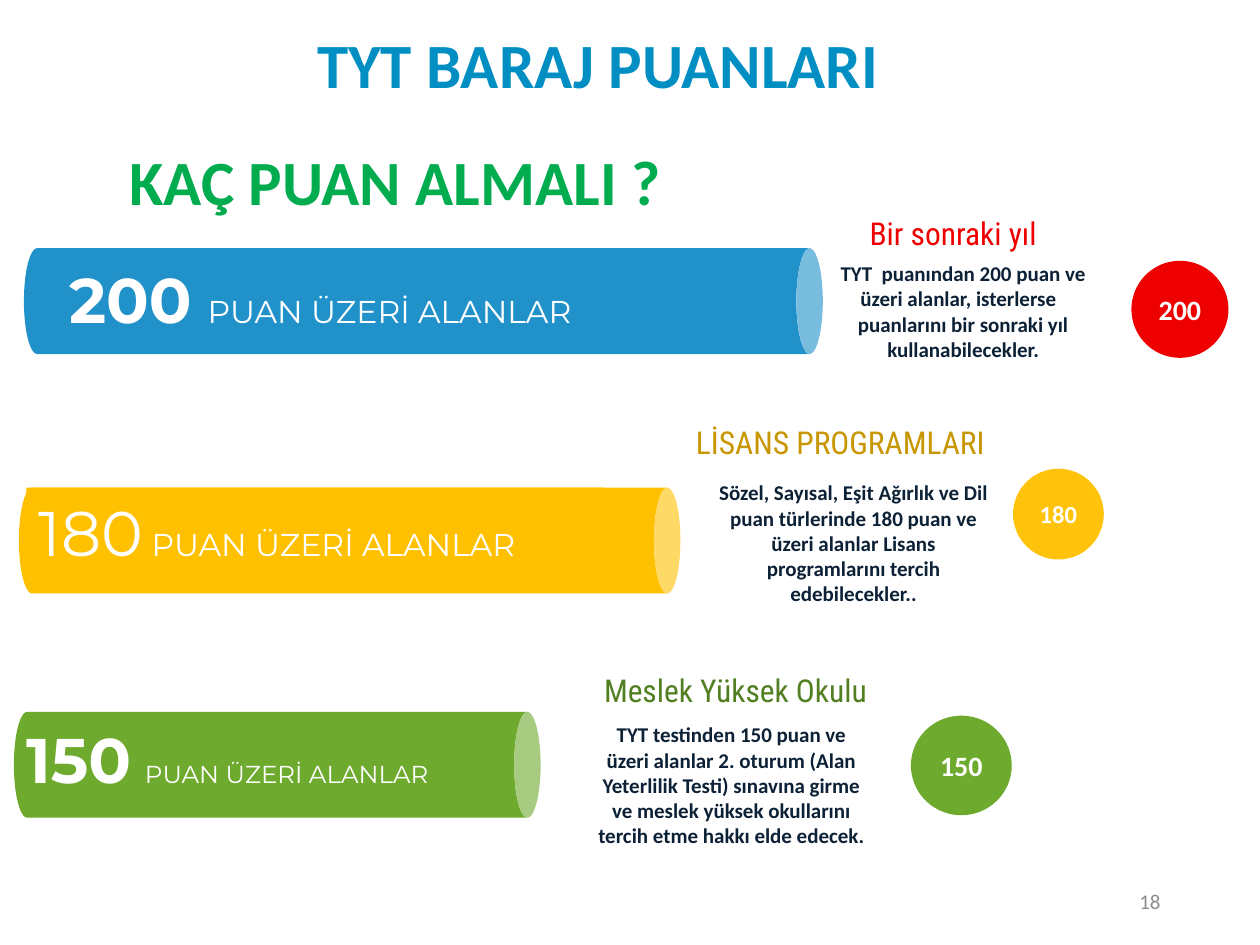
from pptx import Presentation
from pptx.dml.color import RGBColor
from pptx.enum.shapes import MSO_SHAPE
from pptx.enum.text import MSO_ANCHOR, MSO_AUTO_SIZE, PP_ALIGN
from pptx.util import Inches, Pt

WHITE = "FFFFFF"
NAVY = "0C2036"
BAND_HEIGHT = 0.84


def rgb(value):
    return RGBColor.from_string(value)


def inches(box):
    return [Inches(length) for length in box]


def style_run(run, size, color, font="Calibri", bold=False):
    run.font.size = Pt(size)
    run.font.name = font
    run.font.bold = bold
    run.font.color.rgb = rgb(color)


def add_solid(slide, preset, box, color):
    solid = slide.shapes.add_shape(preset, *inches(box))
    solid.fill.solid()
    solid.fill.fore_color.rgb = rgb(color)
    solid.line.fill.background()
    solid.shadow.inherit = False
    return solid


def add_text(slide, box, text, size, color, align, font="Calibri", bold=False):
    caption = slide.shapes.add_textbox(*inches(box))
    frame = caption.text_frame
    frame.word_wrap = True
    frame.auto_size = MSO_AUTO_SIZE.SHAPE_TO_FIT_TEXT
    frame.text = text
    for paragraph in frame.paragraphs:
        paragraph.alignment = align
        for run in paragraph.runs:
            style_run(run, size, color, font, bold)
    return caption


def add_titles(slide, box):
    titles = add_text(slide, box, "TYT BARAJ PUANLARI\nKAÇ PUAN ALMALI ?", 36, "008EC3",
                      PP_ALIGN.LEFT, bold=True)
    heading, question = titles.text_frame.paragraphs
    heading.alignment = PP_ALIGN.CENTER
    question.runs[0].font.color.rgb = rgb("01AC4F")
    for paragraph in (heading, question):
        paragraph.space_before = paragraph.space_after = Pt(12)


def add_band(slide, box, color, label_box, label_runs, label_fill=None):
    left, top, length = box
    can_left = left + (length - BAND_HEIGHT) / 2
    can_top = top + (BAND_HEIGHT - length) / 2
    can = add_solid(slide, MSO_SHAPE.CAN, (can_left, can_top, BAND_HEIGHT, length), color)
    can.rotation = 90

    dx, dy, width = label_box
    place = (left + dx, top + dy, width, 0.71)
    if label_fill:
        label = add_solid(slide, MSO_SHAPE.RECTANGLE, place, label_fill)
    else:
        label = slide.shapes.add_textbox(*inches(place))
    frame = label.text_frame
    frame.word_wrap = True
    frame.auto_size = MSO_AUTO_SIZE.SHAPE_TO_FIT_TEXT
    frame.vertical_anchor = MSO_ANCHOR.TOP
    paragraph = frame.paragraphs[0]
    paragraph.alignment = PP_ALIGN.LEFT
    for text, size, bold in label_runs:
        run = paragraph.add_run()
        run.text = text
        style_run(run, size, WHITE, "Montserrat", bold)


def add_note(slide, box, heading, heading_color, heading_align, body, body_box,
             score, score_size, score_box, score_color):
    left, top, width = box
    dx, dy, body_height = body_box
    add_text(slide, (left + dx, top + dy, 2.37, body_height), body, 12, NAVY,
             PP_ALIGN.CENTER, bold=True)
    add_text(slide, (left, top, width, 0.4), heading, 18, heading_color,
             heading_align, "Roboto Condensed")

    dx, dy, badge_width, badge_height = score_box
    badge = add_solid(slide, MSO_SHAPE.OVAL,
                      (left + dx, top + dy, badge_width, badge_height), score_color)
    frame = badge.text_frame
    frame.margin_left = frame.margin_right = 0
    frame.vertical_anchor = MSO_ANCHOR.MIDDLE
    frame.text = score
    frame.paragraphs[0].alignment = PP_ALIGN.CENTER
    style_run(frame.paragraphs[0].runs[0], score_size, WHITE, bold=True)


def add_page_number(slide, box):
    number = add_text(slide, box, "18", 12, "8C8C8C", PP_ALIGN.RIGHT)
    number.text_frame.auto_size = MSO_AUTO_SIZE.NONE
    number.text_frame.vertical_anchor = MSO_ANCHOR.MIDDLE


def main():
    deck = Presentation()
    deck.slide_width, deck.slide_height = Inches(10), Inches(7.5)
    slide = deck.slides.add_slide(deck.slide_layouts[6])
    areas = "PUAN ÜZERİ ALANLAR"

    add_note(slide, (6.38, 1.65, 2.37), "Bir sonraki yıl", "EF0000", PP_ALIGN.CENTER,
             "TYT  puanından 200 puan ve üzeri alanlar, isterlerse   puanlarını "
             "bir sonraki yıl kullanabilecekler.",
             (0.08, 0.37, 0.91), "200", 16, (2.6, 0.42, 0.77, 0.77), "EF0000")
    add_note(slide, (4.61, 5.28, 2.37), "Meslek Yüksek Okulu", "527F22", PP_ALIGN.RIGHT,
             "TYT testinden 150 puan ve üzeri alanlar 2. oturum (Alan Yeterlilik Testi) "
             "sınavına girme ve meslek yüksek okullarını tercih etme hakkı elde edecek.",
             (0.01, 0.4, 1.11), "150", 16, (2.62, 0.4, 0.8, 0.79), "6DAA2D")
    add_note(slide, (5.3, 3.31, 2.74), "LİSANS PROGRAMLARI", "C89600", PP_ALIGN.CENTER,
             "Sözel, Sayısal, Eşit Ağırlık ve Dil puan türlerinde 180 puan ve "
             "üzeri alanlar Lisans programlarını tercih edebilecekler..",
             (0.29, 0.45, 1.11), "180", 14, (2.74, 0.41, 0.72, 0.72), "FFC30B")

    add_band(slide, (0.19, 1.97, 6.34), "2191C9", (0.26, 0.05, 5.1),
             [("200", 36, True), (" ", 32, True), (areas, 18, False)])
    add_band(slide, (0.15, 3.87, 5.25), "FFC000", (0.06, 0, 4.59),
             [("180", 36, False), (" " + areas, 18, False)], "FFC000")
    add_band(slide, (0.11, 5.65, 4.18), "6DAA2D", (0, 0.02, 5),
             [("150", 36, True), (" ", 28, True), (areas, 14, False)])

    add_titles(slide, (0.93, 0.15, 7.63, 1.65))
    add_page_number(slide, (7.06, 6.95, 2.25, 0.4))
    deck.save("out.pptx")


if __name__ == "__main__":
    main()
